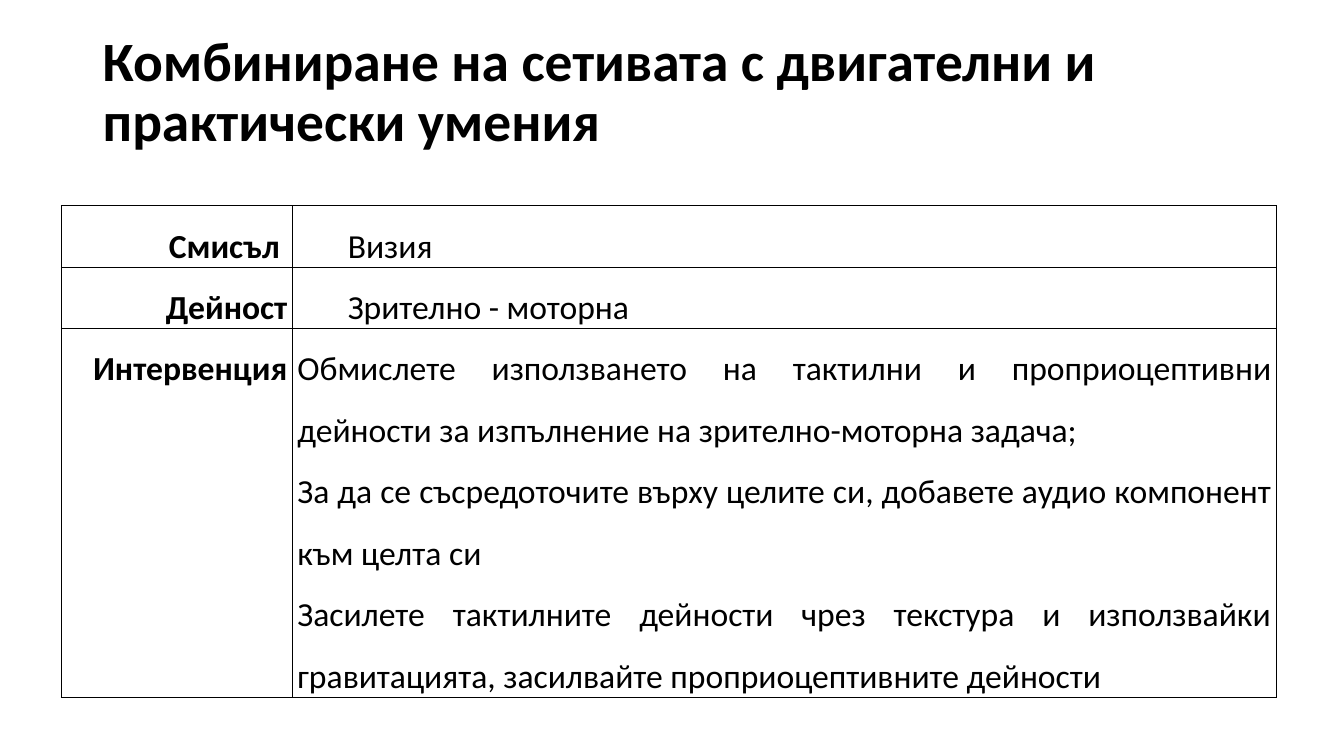
from lxml import etree
from pptx import Presentation
from pptx.dml.color import RGBColor
from pptx.enum.text import MSO_ANCHOR, PP_ALIGN
from pptx.oxml.ns import qn
from pptx.util import Inches, Pt

BLACK = "000000"


def style(p, size, bold, spacing, align):
    p.alignment = align
    p.line_spacing = spacing
    for r in p.runs:
        r.font.name = "Calibri"
        r.font.size = Pt(size)
        r.font.bold = bold
        r.font.color.rgb = RGBColor.from_string(BLACK)


def add_borders(cell):
    tcPr = cell._tc.get_or_add_tcPr()
    for side in ("a:lnL", "a:lnR", "a:lnT", "a:lnB"):
        ln = etree.SubElement(tcPr, qn(side), w=str(Pt(1)))
        fill = etree.SubElement(ln, qn("a:solidFill"))
        etree.SubElement(fill, qn("a:srgbClr"), val=BLACK)


prs = Presentation()
prs.slide_width, prs.slide_height = Inches(13.33), Inches(7.5)
s = prs.slides.add_slide(prs.slide_layouts[6])

title = s.shapes.add_textbox(Inches(0.92), Inches(0.4), Inches(11.76), Inches(1.06))
tf = title.text_frame
tf.word_wrap = True
tf.vertical_anchor = MSO_ANCHOR.MIDDLE
tf.text = "Комбиниране на сетивата с двигателни и практически умения"
style(tf.paragraphs[0], 39.6, True, 0.9, PP_ALIGN.LEFT)

rows = [
    ("Смисъл ", 0.5, ["Визия"], 0.5, 0.61),
    ("Дейност", 0.5, ["Зрително - моторна"], 0.5, 0.61),
    ("Интервенция", 0.16, [
        "Обмислете използването на тактилни и проприоцептивни дейности "
        "за изпълнение на зрително-моторна задача;",
        "За да се съсредоточите върху целите си, добавете аудио компонент към целта си",
        "Засилете тактилните дейности чрез текстура и използвайки "
        "гравитацията, засилвайте проприоцептивните дейности",
    ], 0, 3.66),
]
frame = s.shapes.add_table(len(rows), 2, Inches(0.61), Inches(2.04), Inches(12.05), Inches(4.88))
table = frame.table
table.first_row = table.horz_banding = False
for column, width in zip(table.columns, (2.29, 9.76)):
    column.width = Inches(width)

for i, (label, label_indent, texts, text_indent, height) in enumerate(rows):
    table.rows[i].height = Inches(height)
    columns = [([label], label_indent, True, PP_ALIGN.RIGHT),
               (texts, text_indent, False, PP_ALIGN.JUSTIFY)]
    for j, (lines, indent, bold, align) in enumerate(columns):
        cell = table.cell(i, j)
        cell.margin_left = cell.margin_right = Inches(0.05)
        cell.margin_top = cell.margin_bottom = 0
        add_borders(cell)
        cell.fill.background()
        cell.text_frame.text = "\n".join(lines)
        for p in cell.text_frame.paragraphs:
            style(p, 24, bold, 1.5, align)
            pPr = p._p.get_or_add_pPr()
            pPr.set("marL", str(Inches(indent)))
            pPr.set("indent", "0")

prs.save("out.pptx")
